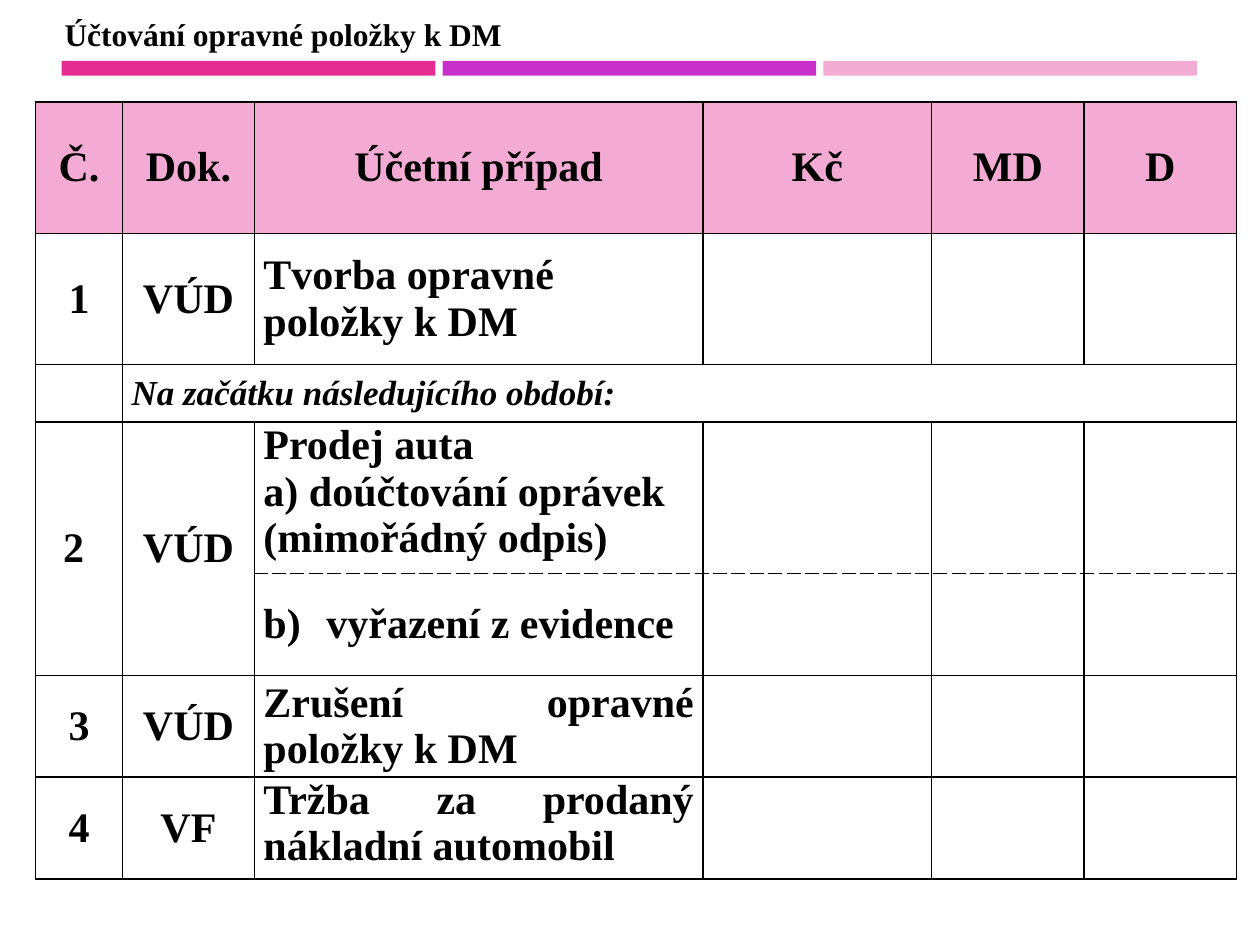
from lxml import etree
from pptx import Presentation
from pptx.dml.color import RGBColor
from pptx.enum.shapes import MSO_SHAPE
from pptx.enum.text import MSO_ANCHOR, MSO_AUTO_SIZE, PP_ALIGN
from pptx.oxml.ns import qn
from pptx.util import Pt

RECT = MSO_SHAPE.RECTANGLE
TOP, MIDDLE = MSO_ANCHOR.TOP, MSO_ANCHOR.MIDDLE
LEFT, CENTER, JUSTIFY = PP_ALIGN.LEFT, PP_ALIGN.CENTER, PP_ALIGN.JUSTIFY

FONT = "Times New Roman"
COLORS = {
    "text": "000000",
    "border": "000000",
    "header": "F4ABD3",
    "bars": ["E32D91", "C830CC", "F3ACD3"],
}

COL_WIDTHS = [49.7, 75.4, 256.3, 130.8, 87.1, 87.1]
ROW_HEIGHTS = [75, 75, 33, 86.4, 58.2, 58.2, 58.2]
HEADINGS = ["Č.", "Dok.", "Účetní případ", "Kč", "MD", "D"]
SPLIT_ROW = 3  # the dashed line runs below this row

# Row, number, document, case text and its format
ENTRIES = [
    (1, "1", "VÚD", "Tvorba opravné položky k DM", {}),
    (3, "2 ", "VÚD", "Prodej auta\na) doúčtování oprávek (mimořádný odpis)",
     {"anchor": TOP}),
    (5, "3", "VÚD", "Zrušení opravné položky k DM", {"align": JUSTIFY}),
    (6, "4", "VF", "Tržba za prodaný nákladní automobil",
     {"align": JUSTIFY, "anchor": TOP}),
]


def write_text(tf, text, size=24, align=LEFT, italic=False, hanging=0):
    for i, line in enumerate(text.split("\n")):
        p = tf.paragraphs[0] if i == 0 else tf.add_paragraph()
        p.alignment = align
        if hanging:
            pPr = p._p.get_or_add_pPr()
            pPr.set("marL", str(Pt(hanging)))
            pPr.set("indent", str(-Pt(hanging)))
        r = p.add_run()
        r.text = line
        r.font.name, r.font.size = FONT, Pt(size)
        r.font.bold, r.font.italic = True, italic
        r.font.color.rgb = RGBColor.from_string(COLORS["text"])


def add_bar(slide, left, color):
    sp = slide.shapes.add_shape(RECT, Pt(left), Pt(34.8), Pt(213.5), Pt(8.4))
    sp.shadow.inherit = False
    sp.fill.solid()
    sp.fill.fore_color.rgb = RGBColor.from_string(color)
    sp.line.fill.background()


def add_title(slide, text):
    sp = slide.shapes.add_textbox(Pt(29.8), Pt(5.2), Pt(267), Pt(29))
    tf = sp.text_frame
    tf.word_wrap = False
    tf.auto_size = MSO_AUTO_SIZE.SHAPE_TO_FIT_TEXT
    write_text(tf, text, size=18)


def set_border(cell, side, dash="solid"):
    ln = etree.SubElement(cell._tc.get_or_add_tcPr(), qn(f"a:ln{side}"),
                          w=str(Pt(1)))
    fill = etree.SubElement(ln, qn("a:solidFill"))
    etree.SubElement(fill, qn("a:srgbClr"), val=COLORS["border"])
    etree.SubElement(ln, qn("a:prstDash"), val=dash)


def style_cell(cell, row, col):
    cell.margin_left = cell.margin_right = Pt(5.2)
    cell.margin_top = cell.margin_bottom = 0
    dashed_side = {SPLIT_ROW: "B", SPLIT_ROW + 1: "T"}.get(row)
    for side in "LRTB":
        dashed = col >= 2 and side == dashed_side
        set_border(cell, side, "sysDash" if dashed else "solid")
    if row == 0:
        cell.fill.solid()
        cell.fill.fore_color.rgb = RGBColor.from_string(COLORS["header"])
    else:
        cell.fill.background()


def fill_cell(cell, text, anchor=MIDDLE, **fmt):
    cell.vertical_anchor = anchor
    write_text(cell.text_frame, text, **fmt)


def add_ledger(slide):
    table = slide.shapes.add_table(
        len(ROW_HEIGHTS), len(COL_WIDTHS), Pt(20.3), Pt(58.3),
        Pt(sum(COL_WIDTHS)), Pt(sum(ROW_HEIGHTS))).table
    table.horz_banding = False
    for column, width in zip(table.columns, COL_WIDTHS):
        column.width = Pt(width)
    for row, height in enumerate(ROW_HEIGHTS):
        table.rows[row].height = Pt(height)
        for col in range(len(COL_WIDTHS)):
            style_cell(table.cell(row, col), row, col)

    # Merged cells: the period note and the two-part sale
    table.cell(2, 1).merge(table.cell(2, 5))
    for col in (0, 1):
        table.cell(SPLIT_ROW, col).merge(table.cell(SPLIT_ROW + 1, col))

    # Texts
    for col, heading in enumerate(HEADINGS):
        fill_cell(table.cell(0, col), heading, align=CENTER)
    for row, number, document, case, fmt in ENTRIES:
        fill_cell(table.cell(row, 0), number, align=CENTER)
        fill_cell(table.cell(row, 1), document, align=CENTER)
        fill_cell(table.cell(row, 2), case, **fmt)
    fill_cell(table.cell(2, 1), "Na začátku následujícího období:",
              size=20, italic=True)
    fill_cell(table.cell(SPLIT_ROW + 1, 2), "b)\tvyřazení z evidence",
              align=JUSTIFY, hanging=36)


def main():
    prs = Presentation()
    prs.slide_width, prs.slide_height = Pt(720), Pt(540)
    slide = prs.slides.add_slide(prs.slide_layouts[6])

    # Colour bars under the title
    for i, color in enumerate(COLORS["bars"]):
        add_bar(slide, 35.3 + i * 217.6, color)
    add_title(slide, "Účtování opravné položky k DM")
    add_ledger(slide)
    prs.save("out.pptx")


if __name__ == "__main__":
    main()
